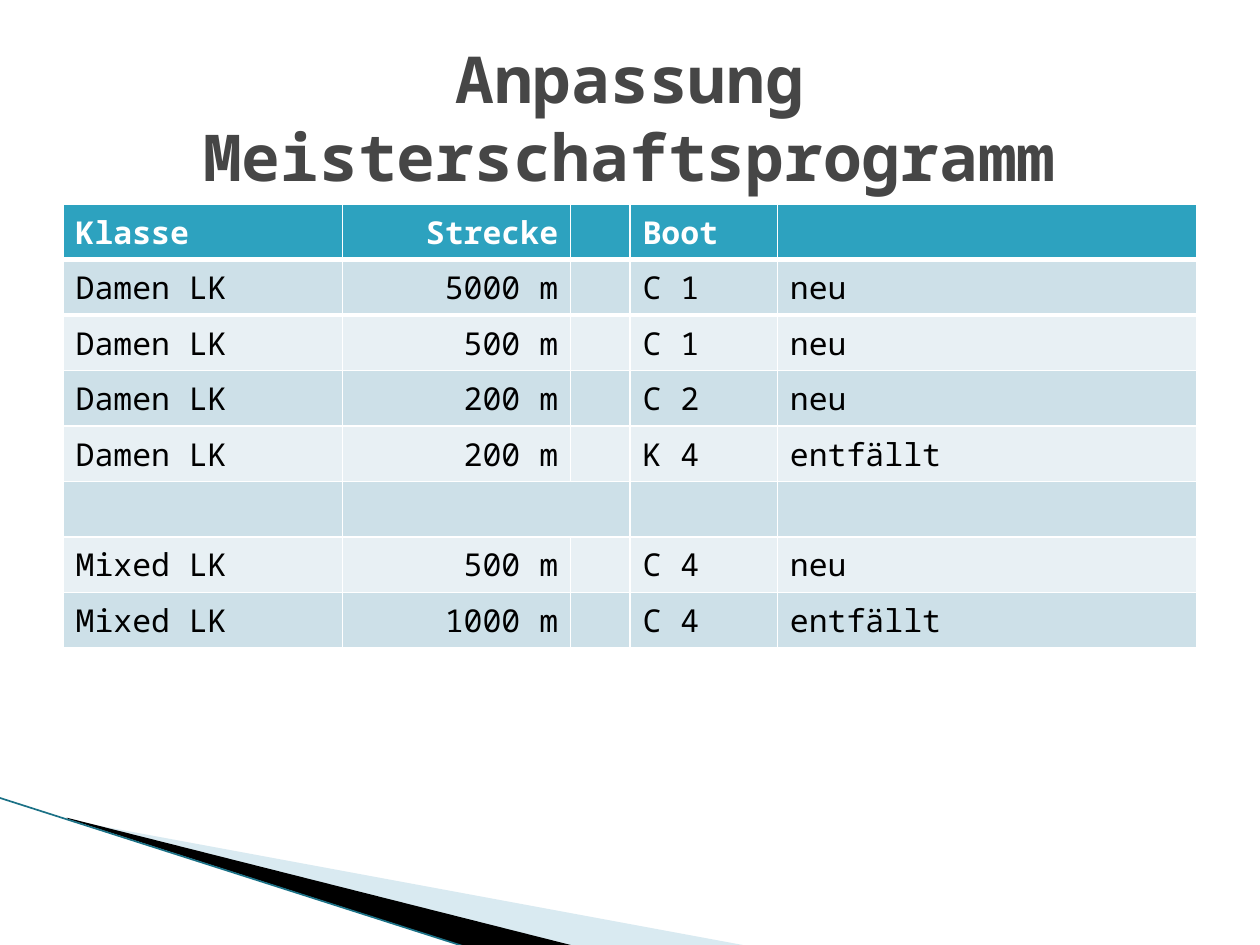
from lxml.etree import SubElement
from pptx import Presentation
from pptx.dml.color import RGBColor
from pptx.enum.shapes import MSO_CONNECTOR
from pptx.enum.text import MSO_ANCHOR, PP_ALIGN
from pptx.oxml.ns import qn
from pptx.util import Inches, Pt

FONT = "Noto Sans Mono"
WHITE = RGBColor(0xFF, 0xFF, 0xFF)
BLACK = RGBColor(0x00, 0x00, 0x00)
GREY = RGBColor(0x46, 0x46, 0x46)
TEAL = RGBColor(0x2D, 0xA2, 0xBF)
BAND_DARK = RGBColor(0xCD, 0xE0, 0xE8)
BAND_LIGHT = RGBColor(0xE8, 0xF0, 0xF4)
WEDGE_BLUE = RGBColor(0xA0, 0xCB, 0xDC)
EDGE_TEAL = RGBColor(0x1B, 0x71, 0x86)

COLUMN_WIDTHS = [2.22, 1.81, 0.47, 1.17, 3.33]
ROW_HEIGHT = 0.41
EMPTY_ROW_HEIGHT = 0.44
DISTANCE_COLUMN = 1
EMPTY_ROW = 5
PROGRAMME = [
    ("Klasse", "Strecke", "", "Boot", ""),
    ("Damen LK", "5000 m", "", "C 1", "neu"),
    ("Damen LK", "500 m", "", "C 1", "neu"),
    ("Damen LK", "200 m", "", "C 2", "neu"),
    ("Damen LK", "200 m", "", "K 4", "entfällt"),
    ("", "", "", "", ""),
    ("Mixed LK", "500 m", "", "C 4", "neu"),
    ("Mixed LK", "1000 m", "", "C 4", "entfällt"),
]


def format_font(font, size, color, bold):
    font.name = FONT
    font.size = Pt(size)
    font.color.rgb = color
    font.bold = bold


def set_frame(shape, frame):
    left, top, width, height = [Inches(value) for value in frame]
    shift_x, shift_y = shape.left - left, shape.top - top
    for outline in shape._element.iter(qn("a:path")):
        outline.set("w", str(width))
        outline.set("h", str(height))
        for point in outline.iter(qn("a:pt")):
            point.set("x", str(int(point.get("x")) + shift_x))
            point.set("y", str(int(point.get("y")) + shift_y))
    shape.left, shape.top, shape.width, shape.height = left, top, width, height


def add_wedge(page, frame, points, color, opacity=None):
    corners = [(Inches(x), Inches(y)) for x, y in points]
    builder = page.shapes.build_freeform(*corners[0])
    builder.add_line_segments(corners[1:])
    wedge = builder.convert_to_shape()
    set_frame(wedge, frame)
    wedge.shadow.inherit = False
    wedge.fill.solid()
    wedge.fill.fore_color.rgb = color
    wedge.line.fill.background()
    if opacity is not None:
        fill_color = wedge.fill._xPr.find(qn("a:solidFill"))[0]
        SubElement(fill_color, qn("a:alpha"), val=str(opacity * 1000))


def add_edge(page, start, end):
    edge = page.shapes.add_connector(
        MSO_CONNECTOR.STRAIGHT, *[Inches(value) for value in start + end]
    )
    edge.line.color.rgb = EDGE_TEAL
    edge.line.width = Pt(0.95)
    SubElement(edge._element.spPr, qn("a:effectLst"))


def set_border(cell, side, width):
    properties = cell._tc.get_or_add_tcPr()
    border = SubElement(properties, qn(f"a:{side}"), w=str(Pt(width)))
    fill = SubElement(border, qn("a:solidFill"))
    SubElement(fill, qn("a:srgbClr"), val=str(WHITE))
    properties.insert(0, border)


def fill_cell(cell, text, fill, color, bold, alignment):
    cell.fill.solid()
    cell.fill.fore_color.rgb = fill
    para = cell.text_frame.paragraphs[0]
    para.alignment = alignment
    span = para.add_run()
    span.text = text
    format_font(span.font, 18, color, bold)


def add_programme_table(page):
    frame = page.shapes.add_table(
        len(PROGRAMME), len(COLUMN_WIDTHS), Inches(0.5), Inches(1.62),
        Inches(sum(COLUMN_WIDTHS)), Inches(ROW_HEIGHT * len(PROGRAMME)),
    )
    table = frame.table
    for column, width in zip(table.columns, COLUMN_WIDTHS):
        column.width = Inches(width)
    for row_index, texts in enumerate(PROGRAMME):
        height = EMPTY_ROW_HEIGHT if row_index == EMPTY_ROW else ROW_HEIGHT
        table.rows[row_index].height = Inches(height)
        header = row_index == 0
        band = BAND_DARK if row_index % 2 else BAND_LIGHT
        fill = TEAL if header else band
        color = WHITE if header else BLACK
        for column_index, text in enumerate(texts):
            right = column_index == DISTANCE_COLUMN
            alignment = PP_ALIGN.RIGHT if right else PP_ALIGN.LEFT
            cell = table.cell(row_index, column_index)
            fill_cell(cell, text, fill, color, header, alignment)
    for column_index in range(len(COLUMN_WIDTHS)):
        set_border(table.cell(0, column_index), "lnB", 3)
        set_border(table.cell(1, column_index), "lnT", 3)
    distance = table.cell(EMPTY_ROW, DISTANCE_COLUMN)
    distance.merge(table.cell(EMPTY_ROW, DISTANCE_COLUMN + 1))


def set_title(page, text):
    title = page.shapes.title
    title.left, title.top = Inches(0.5), Inches(0.3)
    title.width, title.height = Inches(9), Inches(1.25)
    title.text_frame.text = text
    title.text_frame.word_wrap = True
    title.text_frame.vertical_anchor = MSO_ANCHOR.MIDDLE
    para = title.text_frame.paragraphs[0]
    para.alignment = PP_ALIGN.CENTER
    para.line_spacing = 1.0
    format_font(para.runs[0].font, 36.9, GREY, True)


def main():
    deck = Presentation()
    deck.slide_width, deck.slide_height = Inches(10), Inches(7.5)
    page = deck.slides.add_slide(deck.slide_layouts[5])
    add_wedge(
        page, (0.78, 5.47, 4.16, 1.58),
        [(0.55, 6.51), (5.95, 7.51), (4.56, 7.51), (0.55, 6.5)], WEDGE_BLUE, 40,
    )
    add_wedge(
        page, (-0.06, 6.33, 4.16, 0.92),
        [(0.53, 6.49), (4.57, 7.51), (3.72, 7.52), (0.54, 6.5)], BLACK,
    )
    add_edge(page, (-0.01, 6.33), (3.71, 7.52))
    add_programme_table(page)
    set_title(page, "Anpassung Meisterschaftsprogramm")
    deck.save("out.pptx")


if __name__ == "__main__":
    main()
